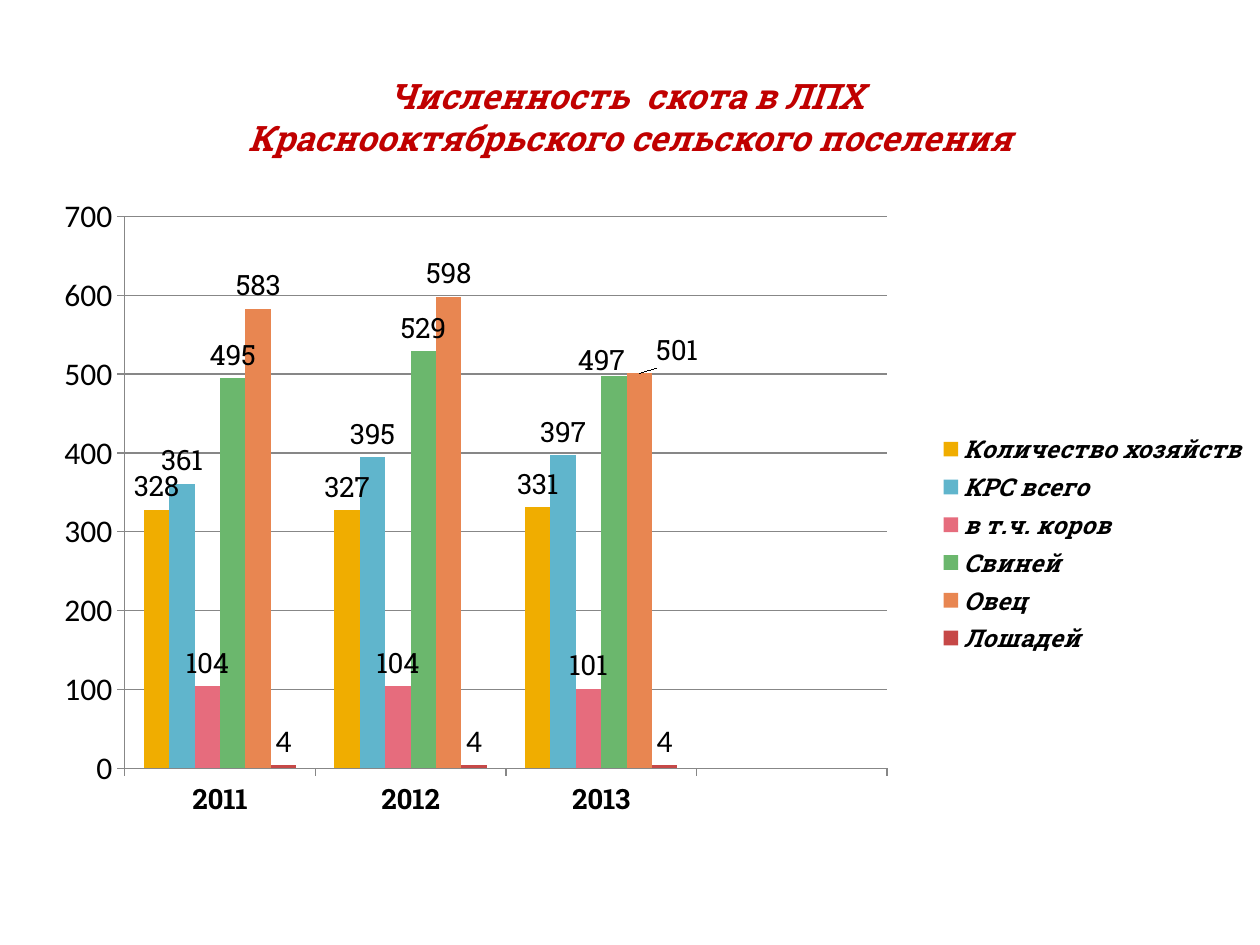
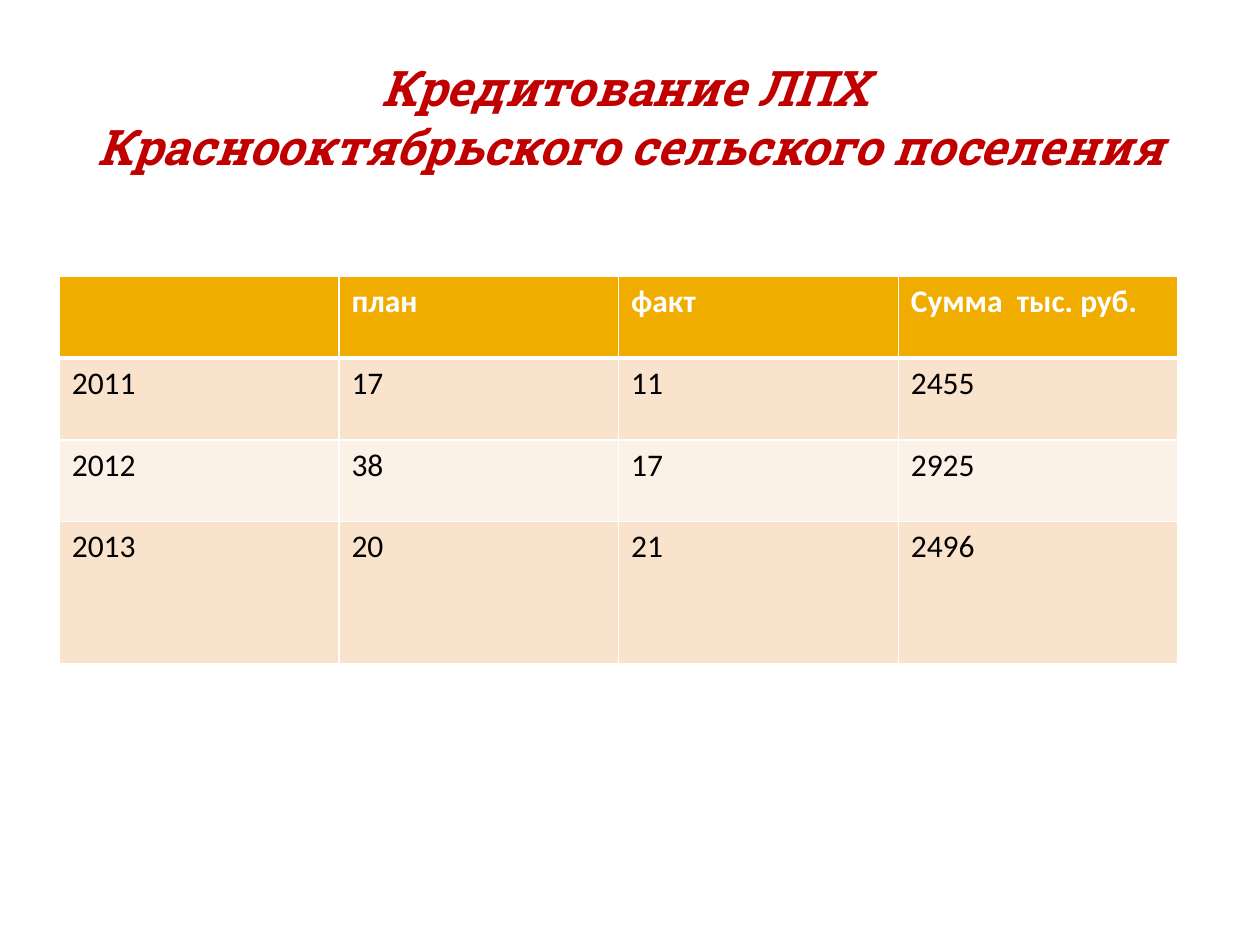
from lxml.etree import SubElement
from pptx import Presentation
from pptx.chart.data import CategoryChartData
from pptx.dml.color import RGBColor
from pptx.enum.chart import XL_CHART_TYPE, XL_LABEL_POSITION, XL_LEGEND_POSITION, XL_TICK_MARK
from pptx.enum.text import MSO_ANCHOR, PP_ALIGN
from pptx.oxml import parse_xml
from pptx.oxml.ns import nsdecls, qn
from pptx.util import Inches, Pt

RED = RGBColor(0xC0, 0x00, 0x00)
BLACK = RGBColor(0x00, 0x00, 0x00)
WHITE = RGBColor(0xFF, 0xFF, 0xFF)
GRAY = RGBColor(0x87, 0x87, 0x87)
GOLD = RGBColor(0xF0, 0xAD, 0x00)
BLUE = RGBColor(0x60, 0xB5, 0xCC)
PINK = RGBColor(0xE6, 0x6C, 0x7D)
GREEN = RGBColor(0x6B, 0xB7, 0x6D)
ORANGE = RGBColor(0xE8, 0x86, 0x51)
BRICK = RGBColor(0xC6, 0x48, 0x47)
PEACH = RGBColor(0xF9, 0xE3, 0xCC)
CREAM = RGBColor(0xFC, 0xF1, 0xE7)

HEAD_FONT = "Roboto Slab"
BODY_FONT = "Calibri"

YEARS = ["2011", "2012", "2013", ""]
LIVESTOCK = [
    ("Количество хозяйств", (328, 327, 331, None), GOLD),
    ("КРС всего", (361, 395, 397, None), BLUE),
    ("в т.ч. коров", (104, 104, 101, None), PINK),
    ("Свиней", (495, 529, 497, None), GREEN),
    ("Овец", (583, 598, 501, None), ORANGE),
    ("Лошадей", (4, 4, 4, None), BRICK),
]
LABEL_SHIFTS = {"Свиней": (-0.01, 0.01), "Овец": (0.03, 0)}

CREDITS = [
    ("", "план", "факт", "Сумма  тыс. руб."),
    ("2011", "17", "11", "2455"),
    ("2012", "38", "17", "2925"),
    ("2013", "20", "21", "2496"),
]


def style_font(font, name, size, color=BLACK, bold=False, italic=False):
    font.name = name
    font.size = Pt(size)
    font.color.rgb = color
    font.bold = bold
    font.italic = italic


def add_titled_slide(prs, lines, size):
    slide = prs.slides.add_slide(prs.slide_layouts[5])
    title = slide.shapes.title
    title.left, title.top = Inches(0.5), Inches(0.3)
    title.width, title.height = Inches(9), Inches(1.25)
    tf = title.text_frame
    tf.vertical_anchor = MSO_ANCHOR.MIDDLE
    p = tf.paragraphs[0]
    p.alignment = PP_ALIGN.CENTER
    for i, line in enumerate(lines):
        if i:
            p.add_line_break()
        r = p.add_run()
        r.text = line
        style_font(r.font, HEAD_FONT, size, RED, bold=True, italic=True)
    return slide


def manual_layout(**settings):
    layout = parse_xml(f"<c:layout {nsdecls('c')}><c:manualLayout/></c:layout>")
    for tag, value in settings.items():
        SubElement(layout[0], qn(f"c:{tag}")).set("val", str(value))
    return layout


def set_plot_area(chart, x, y, w, h):
    plot_area = chart._chartSpace.chart.plotArea
    for old in plot_area.findall(qn("c:layout")):
        plot_area.remove(old)
    plot_area.insert(0, manual_layout(
        layoutTarget="inner", xMode="edge", yMode="edge", x=x, y=y, w=w, h=h))


def shift_label(series, index, dx, dy):
    label = series.points[index].data_label
    style_font(label.font, HEAD_FONT, 16)
    label.position = XL_LABEL_POSITION.OUTSIDE_END
    idx = series._element.find(f".//{qn('c:dLbl')}/{qn('c:idx')}")
    idx.addnext(manual_layout(x=dx, y=dy))


def style_series(series, color):
    series.format.fill.solid()
    series.format.fill.fore_color.rgb = color
    series.invert_if_negative = False
    labels = series.data_labels
    labels.show_value = True
    labels.position = XL_LABEL_POSITION.OUTSIDE_END
    style_font(labels.font, HEAD_FONT, 16)
    if series.name in LABEL_SHIFTS:
        shift_label(series, 2, *LABEL_SHIFTS[series.name])


def style_axes(chart):
    for axis in (chart.category_axis, chart.value_axis):
        axis.major_tick_mark = XL_TICK_MARK.OUTSIDE
        axis.minor_tick_mark = XL_TICK_MARK.NONE
        axis.format.line.color.rgb = GRAY
    style_font(chart.category_axis.tick_labels.font, HEAD_FONT, 16, bold=True)
    value_axis = chart.value_axis
    value_axis.minimum_scale, value_axis.maximum_scale = 0, 700
    value_axis.major_unit = 100
    value_axis.has_major_gridlines = True
    value_axis.major_gridlines.format.line.color.rgb = GRAY


def add_livestock_chart(slide):
    data = CategoryChartData()
    data.categories = YEARS
    for name, values, _ in LIVESTOCK:
        data.add_series(name, values)
    chart = slide.shapes.add_chart(
        XL_CHART_TYPE.COLUMN_CLUSTERED,
        Inches(0), Inches(1.41), Inches(10), Inches(5.81), data).chart
    style_font(chart.font, BODY_FONT, 18)
    chart.has_title = False
    plot = chart.plots[0]
    plot.vary_by_categories = False
    plot.gap_width = 150
    plot.overlap = 0
    for series, (_, _, color) in zip(plot.series, LIVESTOCK):
        style_series(series, color)
    style_font(plot.series[-1].data_labels.font, BODY_FONT, 18)
    style_axes(chart)
    chart.has_legend = True
    chart.legend.position = XL_LEGEND_POSITION.RIGHT
    chart.legend.include_in_layout = False
    style_font(chart.legend.font, HEAD_FONT, 14, bold=True, italic=True)
    set_plot_area(chart, 0.1, 0.05, 0.61, 0.75)
    set_plot_area(chart, 0.099, 0.053, 0.605, 0.754)


def set_borders(cell, widths):
    tc_pr = cell._tc.get_or_add_tcPr()
    for side, width in widths.items():
        tc_pr.append(parse_xml(
            f'<a:ln{side} {nsdecls("a")} w="{Pt(width)}"><a:solidFill>'
            f'<a:srgbClr val="{WHITE}"/></a:solidFill></a:ln{side}>'))


def fill_cell(cell, text, row):
    header = row == 0
    set_borders(cell, {"L": 1, "R": 1, "T": 3 if row == 1 else 1, "B": 3 if header else 1})
    cell.fill.solid()
    cell.fill.fore_color.rgb = GOLD if header else (CREAM, PEACH)[row % 2]
    if text:
        r = cell.text_frame.paragraphs[0].add_run()
        r.text = text
        style_font(r.font, BODY_FONT, 18, WHITE if header else BLACK, bold=header)


def add_credit_table(slide):
    table = slide.shapes.add_table(
        len(CREDITS), len(CREDITS[0]),
        Inches(0.47), Inches(2.19), Inches(8.88), Inches(3.08)).table
    for column in table.columns:
        column.width = Inches(2.22)
    for row, height in zip(table.rows, (0.65, 0.65, 0.65, 1.13)):
        row.height = Inches(height)
    for i, texts in enumerate(CREDITS):
        for j, text in enumerate(texts):
            fill_cell(table.cell(i, j), text, i)


def main():
    prs = Presentation()
    prs.slide_width, prs.slide_height = Inches(10), Inches(7.5)
    place = "Краснооктябрьского сельского поселения"
    add_livestock_chart(add_titled_slide(prs, ["Численность  скота в ЛПХ ", place], 20))
    add_credit_table(add_titled_slide(prs, ["Кредитование ЛПХ ", place], 28))
    prs.save("out.pptx")


if __name__ == "__main__":
    main()
